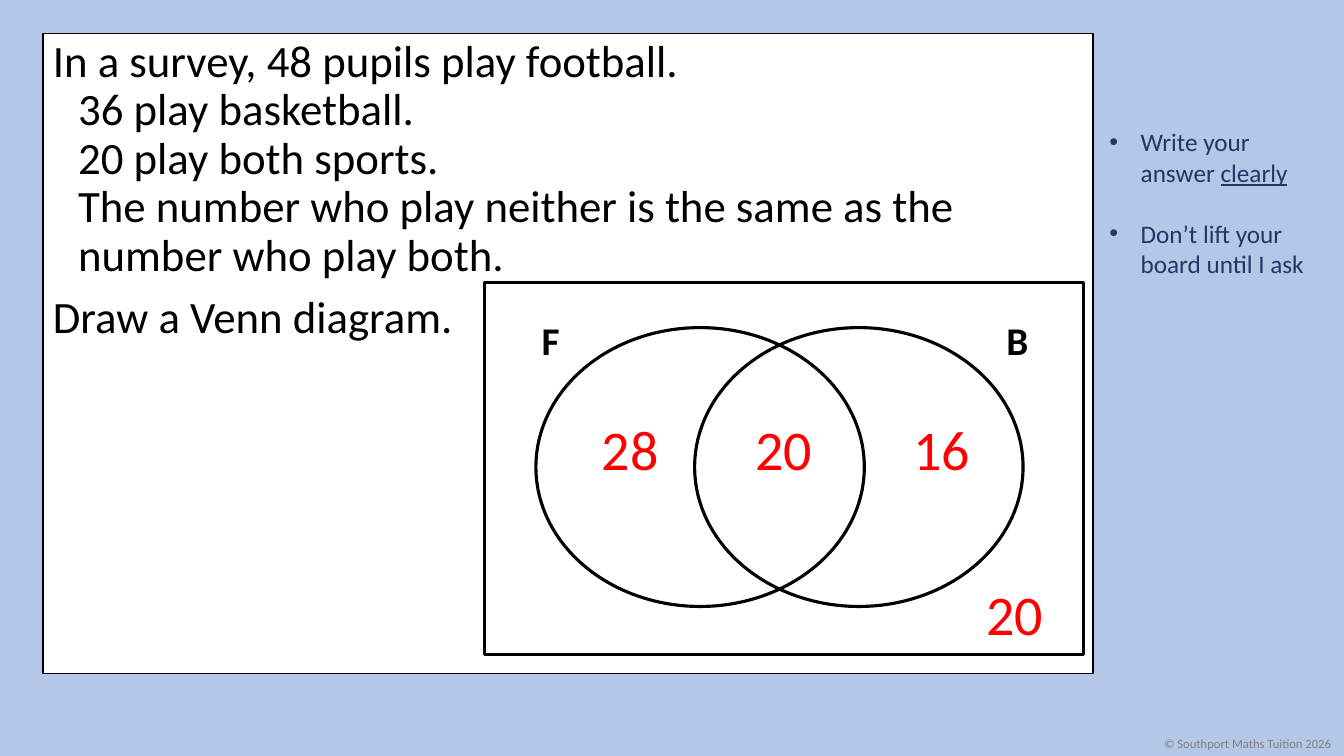
from lxml.etree import SubElement
from pptx import Presentation
from pptx.dml.color import RGBColor
from pptx.enum.shapes import MSO_SHAPE
from pptx.enum.text import MSO_ANCHOR, MSO_AUTO_SIZE, PP_ALIGN
from pptx.oxml.ns import qn
from pptx.util import Inches, Pt

COLORS = {"sky": "B4C7E7", "white": "FFFFFF", "black": "000000",
          "navy": "203864", "grey": "808080", "red": "FF0000"}
COLS, ROWS = 160, 90
WIDTH, HEIGHT = Inches(13.33), Inches(7.5)


def color(name):
    """Return the named colour."""
    return RGBColor.from_string(COLORS[name])


def box(col, row, cols, rows):
    """Turn grid columns and rows into left, top, width and height."""
    return (round(WIDTH * col / COLS), round(HEIGHT * row / ROWS),
            round(WIDTH * cols / COLS), round(HEIGHT * rows / ROWS))


def add_run(p, text, size, ink, bold=None, underline=None):
    """Add one formatted run to a paragraph."""
    r = p.add_run()
    r.text = text
    r.font.name, r.font.size = "Calibri", Pt(size)
    r.font.bold, r.font.underline = bold, underline
    r.font.color.rgb = color(ink)


def set_bullet(p, indent, char=None):
    """Give a paragraph a hanging indent, with a bullet if char is set."""
    pPr = p._p.get_or_add_pPr()
    pPr.set("marL", str(Inches(indent)))
    pPr.set("indent", str(-Inches(indent)))
    if char:
        SubElement(pPr, qn("a:buFont")).set("typeface", "Arial")
        SubElement(pPr, qn("a:buChar")).set("char", char)
    else:
        SubElement(pPr, qn("a:buNone"))


def add_label(s, place, text, size, ink, align=PP_ALIGN.LEFT, bold=None):
    """Add a one-line text box."""
    tf = s.shapes.add_textbox(*box(*place)).text_frame
    tf.word_wrap = False
    tf.auto_size = MSO_AUTO_SIZE.SHAPE_TO_FIT_TEXT
    p = tf.paragraphs[0]
    p.alignment = align
    add_run(p, text, size, ink, bold)


def add_outline(group, kind, place):
    """Add an unfilled black shape to a group."""
    sp = group.shapes.add_shape(kind, *box(*place))
    sp.shadow.inherit = False
    sp.fill.background()
    sp.line.color.rgb = color("black")
    sp.line.width = Pt(2.25)


def add_question(s, paragraphs):
    """Fill the body placeholder with paragraphs, each a list of lines."""
    sp = s.placeholders[1]
    sp.left, sp.top, sp.width, sp.height = box(5.1, 4, 125, 76.2)
    sp.fill.solid()
    sp.fill.fore_color.rgb = color("white")
    sp.line.color.rgb = color("black")
    sp.line.width = Pt(1)
    tf = sp.text_frame
    tf.auto_size = MSO_AUTO_SIZE.NONE
    tf.vertical_anchor = MSO_ANCHOR.TOP
    for i, lines in enumerate(paragraphs):
        p = tf.add_paragraph() if i else tf.paragraphs[0]
        set_bullet(p, 0.25)
        p.line_spacing = 0.9
        p.space_before = Pt(10 if i else 0)
        for j, line in enumerate(lines):
            if j:
                p.add_line_break()
            add_run(p, line, 32, "black")


def add_advice(s, items):
    """Add the bulleted reminders, each a list of text and underline pairs."""
    tf = s.shapes.add_textbox(*box(130.9, 14.5, 27.9, 19.4)).text_frame
    tf.word_wrap = True
    for i, runs in enumerate(items):
        p = tf.add_paragraph() if i else tf.paragraphs[0]
        set_bullet(p, 0.31, "•")
        p.space_before = Pt(22 if i else 0)
        for text, underline in runs:
            add_run(p, text, 18, "navy", underline=underline)


def add_venn(s):
    """Draw the Venn diagram with its set names and counts."""
    group = s.shapes.add_group_shape()
    for i in range(2):
        add_outline(group, MSO_SHAPE.OVAL, (63.8 + 18.9 * i, 39, 39.1, 33.2))
    add_outline(group, MSO_SHAPE.RECTANGLE, (57.7, 33.6, 71.3, 44.3))
    for name, col, cols in (("F", 63.2, 4.6), ("B", 118.6, 5)):
        add_label(s, (col, 37.1, cols, 6.8), name, 28, "black", PP_ALIGN.RIGHT, True)
    for count, col, row in (("20", 88.7, 48.7), ("28", 70.4, 48.8),
                            ("16", 107.5, 48.7), ("20", 116.2, 68.4)):
        add_label(s, (col, row, 9.2, 9.2), count, 40, "red", PP_ALIGN.CENTER)


def main():
    """Build the slide and save it."""
    prs = Presentation()
    prs.slide_width, prs.slide_height = WIDTH, HEIGHT
    s = prs.slides.add_slide(prs.slide_layouts[1])
    title = s.shapes.title._element
    title.getparent().remove(title)
    s.background.fill.solid()
    s.background.fill.fore_color.rgb = color("sky")
    add_question(s, [
        ["In a survey, 48 pupils play football.", "36 play basketball.",
         "20 play both sports.",
         "The number who play neither is the same as the number who play both."],
        ["Draw a Venn diagram."]])
    add_advice(s, [[("Write your answer ", None), ("clearly", True)],
                   [("Don’t lift your board until I ask", None)]])
    add_label(s, (137.4, 87, 22.6, 3), "© Southport Maths Tuition 2026", 9, "grey")
    add_venn(s)
    prs.save("out.pptx")


if __name__ == "__main__":
    main()
